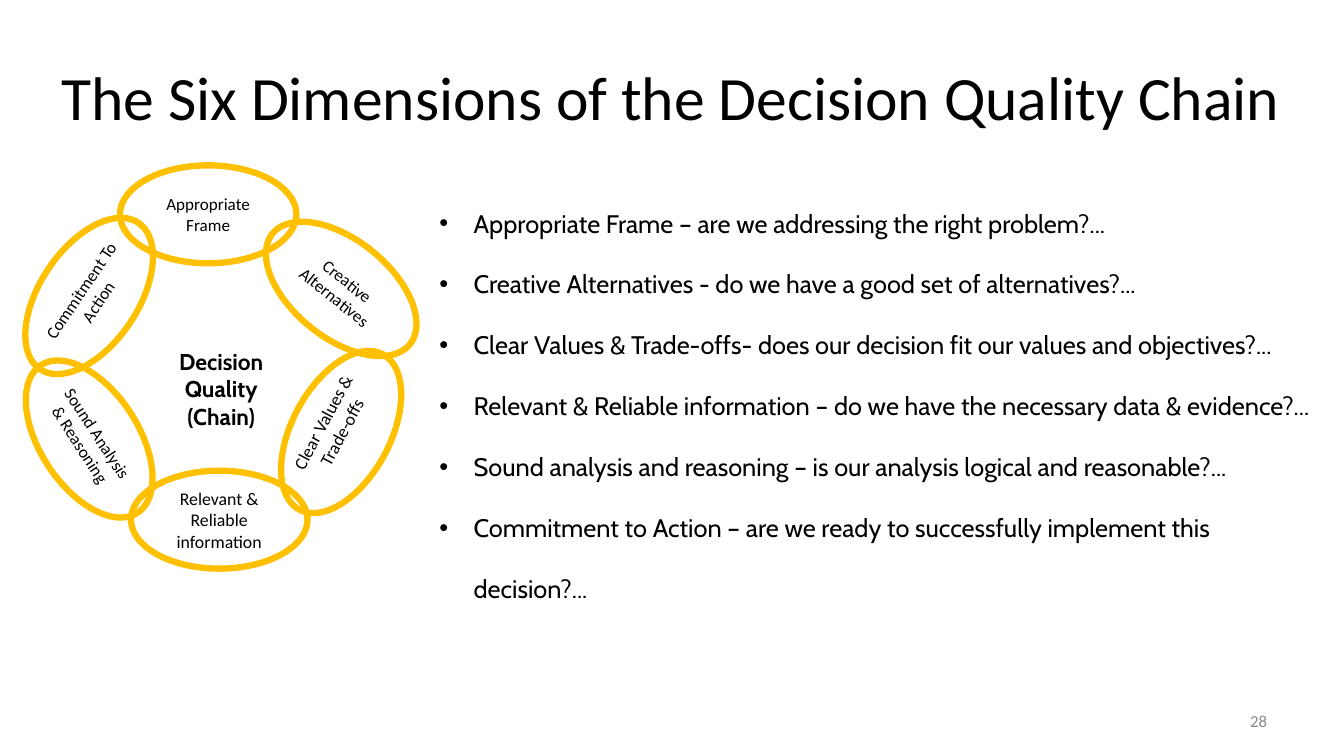
from dataclasses import dataclass

from lxml import etree
from pptx import Presentation
from pptx.dml.color import RGBColor
from pptx.enum.shapes import MSO_SHAPE
from pptx.enum.text import MSO_ANCHOR, PP_ALIGN
from pptx.oxml.ns import qn
from pptx.util import Pt

OVAL = MSO_SHAPE.OVAL
TOP, MIDDLE = MSO_ANCHOR.TOP, MSO_ANCHOR.MIDDLE
LEFT, CENTER, RIGHT = PP_ALIGN.LEFT, PP_ALIGN.CENTER, PP_ALIGN.RIGHT


@dataclass(frozen=True)
class Theme:
    ink: RGBColor = RGBColor(0x00, 0x00, 0x00)
    muted: RGBColor = RGBColor(0x89, 0x89, 0x89)
    gold: RGBColor = RGBColor(0xFF, 0xC0, 0x00)
    plain_font: str = "Calibri"
    accent_font: str = "Cabin"
    title_size: float = 44
    question_size: float = 18.1
    hub_size: float = 16.3
    link_size: float = 12.2
    large_link_size: float = 12.7
    number_size: float = 12


THEME = Theme()
LINK_WIDTH, LINK_HEIGHT = 126, 70
LINKS = [
    ("Appropriate Frame", 85.7, 118.1, 0, THEME.link_size, 0),
    ("Creative Alternatives", 180.7, 171.4, 38.8, THEME.link_size, 0),
    ("Clear Values & Trade-offs", 180.7, 273.6, 298.3, THEME.large_link_size, 15),
    ("Relevant & Reliable information", 93.6, 336.2, 0, THEME.large_link_size, 0),
    ("Commitment To Action", 0.7, 176.4, 303.9, THEME.link_size, 0),
    ("Sound Analysis & Reasoning", 0.7, 278.6, 56.8, THEME.link_size, 0),
]
QUESTIONS = [
    "Appropriate Frame – are we addressing the right problem?...",
    "Creative Alternatives - do we have a good set of alternatives?...",
    "Clear Values & Trade-offs- does our decision fit our values and objectives?...",
    "Relevant & Reliable information – do we have the necessary data & evidence?...",
    "Sound analysis and reasoning – is our analysis logical and reasonable?...",
    "Commitment to Action – are we ready to successfully implement this decision?...",
]


def write(frame, lines, size, font=THEME.plain_font, color=THEME.ink,
          align=CENTER, anchor=MIDDLE, bold=False):
    frame.word_wrap = True
    frame.vertical_anchor = anchor
    for index, line in enumerate(lines):
        paragraph = frame.paragraphs[0] if index == 0 else frame.add_paragraph()
        paragraph.alignment = align
        run = paragraph.add_run()
        run.text = line
        run.font.name = font
        run.font.size = Pt(size)
        run.font.bold = bold
        run.font.color.rgb = color


def add_text(slide, box, lines, size, **style):
    frame = slide.shapes.add_textbox(*map(Pt, box)).text_frame
    write(frame, lines, size, **style)
    return frame


def add_link(slide, label, left, top, angle, size, lift):
    link = slide.shapes.add_shape(
        OVAL, Pt(left), Pt(top), Pt(LINK_WIDTH), Pt(LINK_HEIGHT))
    link.rotation = angle
    link.shadow.inherit = False
    link.fill.background()
    link.line.color.rgb = THEME.gold
    link.line.width = Pt(4.5)
    frame = link.text_frame
    frame.margin_left = frame.margin_right = Pt(3.6)
    frame.margin_top = Pt(0)
    frame.margin_bottom = Pt(lift)
    write(frame, [label], size)


def add_questions(slide, box):
    frame = add_text(slide, box, QUESTIONS, THEME.question_size,
                     font=THEME.accent_font, align=LEFT, anchor=TOP)
    for paragraph in frame.paragraphs:
        paragraph.line_spacing = 2.0
        properties = paragraph._p.get_or_add_pPr()
        indent = Pt(24.5)
        properties.set("marL", str(indent))
        properties.set("indent", str(-indent))
        etree.SubElement(properties, qn("a:buFont")).set("typeface", "Arial")
        etree.SubElement(properties, qn("a:buChar")).set("char", "•")


def main():
    deck = Presentation()
    deck.slide_width, deck.slide_height = Pt(960), Pt(540)
    slide = deck.slides.add_slide(deck.slide_layouts[6])

    add_text(slide, (33.8, 31.7, 891.4, 74.2),
             ["The Six Dimensions of the Decision Quality Chain"], THEME.title_size)
    add_text(slide, (688.3, 500.4, 223.9, 28.8), ["28"], THEME.number_size,
             color=THEME.muted, align=RIGHT)
    for link in LINKS:
        add_link(slide, *link)
    add_text(slide, (95, 244.8, 126, 46.8), ["Decision Quality", "(Chain)"],
             THEME.hub_size, font=THEME.accent_font, anchor=TOP, bold=True)
    add_questions(slide, (306.7, 123.1, 647.3, 337))

    deck.save("out.pptx")


if __name__ == "__main__":
    main()
